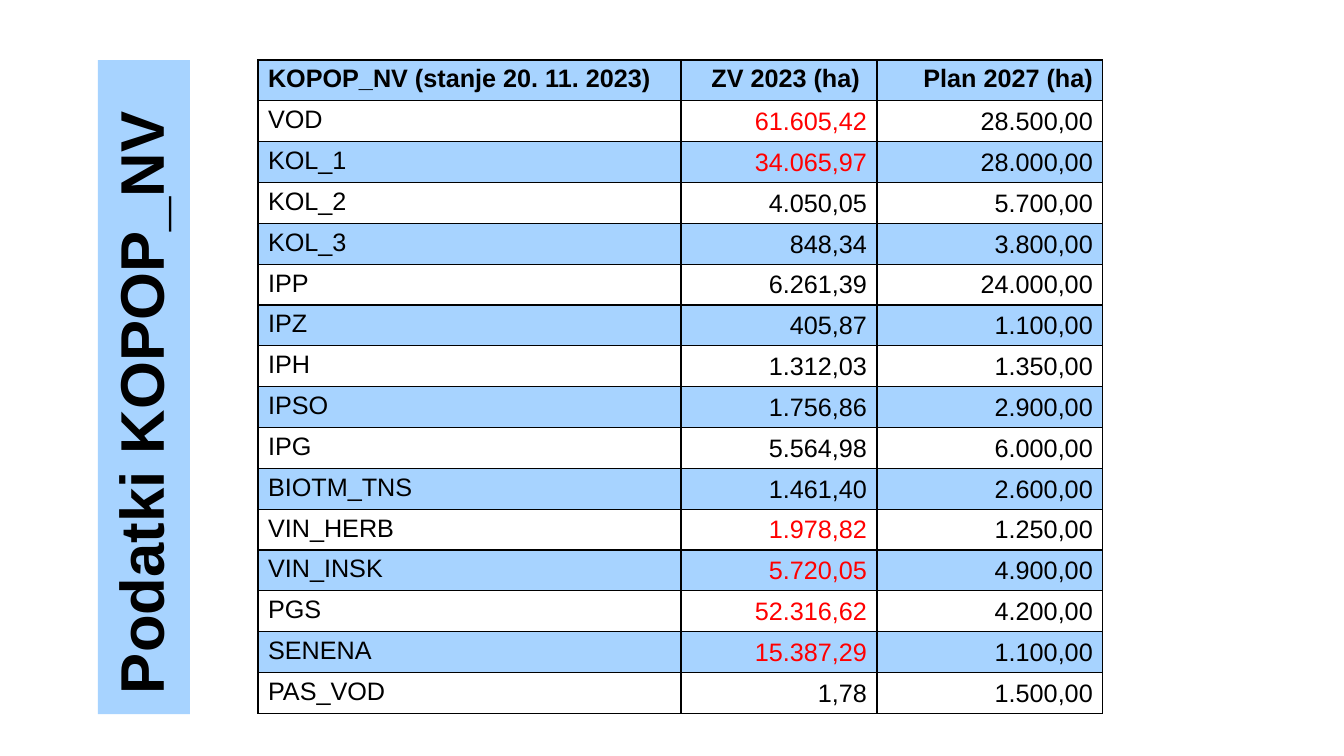
from dataclasses import dataclass

from lxml.etree import SubElement
from pptx import Presentation
from pptx.dml.color import RGBColor as Rgb
from pptx.enum.shapes import MSO_SHAPE as Shape
from pptx.enum.text import MSO_ANCHOR as Anchor, PP_ALIGN as Align
from pptx.oxml import parse_xml
from pptx.oxml.ns import nsdecls, qn
from pptx.util import Emu, Pt


@dataclass(frozen=True)
class Theme:
    font: str = "Arial"
    ink: str = "000000"
    alert: str = "FF0000"
    band: str = "A7D3FF"
    paper: str = "FFFFFF"
    title_size: int = 44
    table_size: int = 18
    border: int = 1


def px(length):
    return Emu(round(length * 914400 / 100.8))


def hectares(text):
    return float(text.replace(".", "").replace(",", "."))


class SlideBuilder:
    """Draws styled elements on the current slide."""

    def __init__(self, theme, slide):
        self.theme = theme
        self.slide = slide

    def set_text(self, frame, text, size, color, bold=False, align=Align.LEFT):
        frame.text = text
        paragraph = frame.paragraphs[0]
        paragraph.alignment = align
        font = paragraph.runs[0].font
        font.name, font.size, font.bold = self.theme.font, Pt(size), bold
        font.color.rgb = Rgb.from_string(color)
        return paragraph

    def fill(self, target, color):
        target.fill.solid()
        target.fill.fore_color.rgb = Rgb.from_string(color)

    def side_title(self, text, left, top, width, height):
        banner = self.slide.shapes.add_shape(
            Shape.RECTANGLE, px(left), px(top), px(width), px(height))
        banner.rotation = 270
        banner.shadow.inherit = False
        self.fill(banner, self.theme.band)
        banner.line.fill.background()
        frame = banner.text_frame
        frame.word_wrap = True
        frame.vertical_anchor = Anchor.MIDDLE
        frame.margin_left, frame.margin_right = px(20), px(10)
        frame.margin_top = frame.margin_bottom = px(5)
        self.set_text(frame, text, self.theme.title_size, self.theme.ink, True).line_spacing = 0.9

    def borders(self, cell):
        properties = cell._tc.get_or_add_tcPr()
        for position, side in enumerate(("lnL", "lnR", "lnT", "lnB")):
            edge = parse_xml(f'<a:{side} {nsdecls("a")} w="{Pt(self.theme.border)}"/>')
            color = SubElement(SubElement(edge, qn("a:solidFill")), qn("a:srgbClr"))
            color.set("val", self.theme.ink)
            properties.insert(position, edge)

    def table(self, header, measures, left, top, widths, height):
        rows = [header, *measures]
        table = self.slide.shapes.add_table(
            len(rows), len(header), px(left), px(top), px(sum(widths)), px(height)).table
        table.first_row = table.horz_banding = False
        for column, width in zip(table.columns, widths):
            column.width = px(width)
        for r, values in enumerate(rows):
            table.rows[r].height = px(height / len(rows))
            over_plan = r > 0 and hectares(values[1]) > hectares(values[2])
            for c, value in enumerate(values):
                cell = table.cell(r, c)
                self.fill(cell, self.theme.paper if r % 2 else self.theme.band)
                self.borders(cell)
                if r and c:
                    cell.vertical_anchor = Anchor.MIDDLE
                    cell.margin_top, cell.margin_bottom = px(1), px(0)
                self.set_text(cell.text_frame, value, self.theme.table_size,
                              self.theme.alert if over_plan and c == 1 else self.theme.ink,
                              r == 0, Align.RIGHT if c else Align.LEFT)


HEADER = ("KOPOP_NV (stanje 20. 11. 2023)", " ZV 2023 (ha) ", "Plan 2027 (ha)")
MEASURES = [
    ("VOD", "61.605,42", "28.500,00"),
    ("KOL_1", "34.065,97", "28.000,00"),
    ("KOL_2", "4.050,05", "5.700,00"),
    ("KOL_3", "848,34", "3.800,00"),
    ("IPP", "6.261,39", "24.000,00"),
    ("IPZ", "405,87", "1.100,00"),
    ("IPH", "1.312,03", "1.350,00"),
    ("IPSO", "1.756,86", "2.900,00"),
    ("IPG", "5.564,98", "6.000,00"),
    ("BIOTM_TNS", "1.461,40", "2.600,00"),
    ("VIN_HERB", "1.978,82", "1.250,00"),
    ("VIN_INSK", "5.720,05", "4.900,00"),
    ("PGS", "52.316,62", "4.200,00"),
    ("SENENA", "15.387,29", "1.100,00"),
    ("PAS_VOD", "1,78", "1.500,00"),
]


def main():
    presentation = Presentation()
    presentation.slide_width, presentation.slide_height = px(1344), px(756)
    slide = presentation.slides.add_slide(presentation.slide_layouts[6])
    builder = SlideBuilder(Theme(), slide)
    builder.table(HEADER, MEASURES, 258, 60, (423, 196, 226), 654)
    builder.side_title("Podatki KOPOP_NV", -183, 341, 654, 92)
    presentation.save("out.pptx")


if __name__ == "__main__":
    main()
